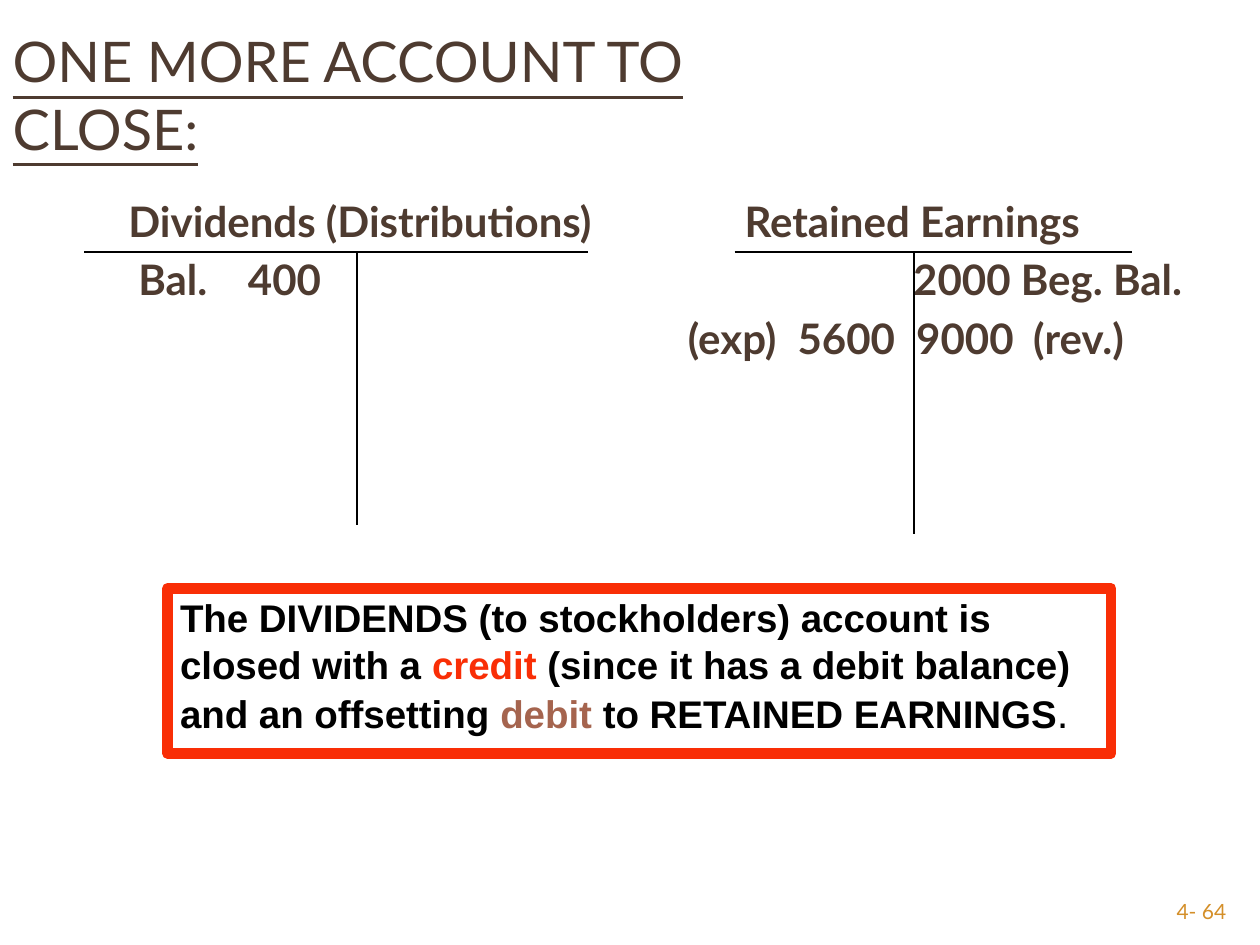
from dataclasses import dataclass

import pptx
import pptx.dml.color
import pptx.enum.shapes
import pptx.enum.text
import pptx.oxml.ns
import pptx.util
from lxml import etree

Cm = pptx.util.Cm
Pt = pptx.util.Pt
COLORS = {"brown": "4E3B30", "gold": "D48F29", "red": "F92E06",
          "rust": "A5644E", "black": "000000"}
RULE_TOP = 5.08


@dataclass
class TAccount:
    left: float
    right: float
    stem: float
    bottom: float


@dataclass
class Entry:
    text: str
    tabs: tuple[float, ...]  # distances from the text edge, in cm


ACCOUNTS = [TAccount(14.81, 22.83, 18.42, 10.77),
            TAccount(1.7, 11.86, 7.19, 10.59)]
ENTRIES = [
    Entry("Dividends (Distributions)\tRetained Earnings", (12.42,)),
    Entry("\tBal.\t400\t2000 Beg. Bal.", (0.2, 2.41, 15.82)),
    Entry("\t(exp)\t5600\t9000\t(rev.)", (11.28, 13.49, 15.88, 18.24)),
]
NOTE = [
    ("The DIVIDENDS (to stockholders) account is closed with a ", "black"),
    ("credit", "red"),
    (" (since it has a debit balance) and an offsetting ", "black"),
    ("debit", "rust"),
    (" to RETAINED EARNINGS", "black"),
]


def rgb(name: str) -> pptx.dml.color.RGBColor:
    return pptx.dml.color.RGBColor.from_string(COLORS[name])


def style(font, size: float, color: str, bold: bool = False,
          face: str = "Lato") -> None:
    font.name, font.size, font.bold = face, Pt(size), bold
    font.color.rgb = rgb(color)


def add_rule(page, x1: float, y1: float, x2: float, y2: float) -> None:
    rule = page.shapes.add_connector(
        pptx.enum.shapes.MSO_CONNECTOR.STRAIGHT, Cm(x1), Cm(y1), Cm(x2), Cm(y2))
    rule.line.color.rgb = rgb("black")
    rule.line.width = Pt(1)
    etree.SubElement(rule._element.spPr, pptx.oxml.ns.qn("a:effectLst"))


def set_tabs(para, tabs: tuple[float, ...]) -> None:
    tab_list = etree.SubElement(para._p.get_or_add_pPr(),
                                pptx.oxml.ns.qn("a:tabLst"))
    for tab in tabs:
        etree.SubElement(tab_list, pptx.oxml.ns.qn("a:tab"),
                         pos=str(int(Cm(tab))), algn="l")


def add_title(page) -> None:
    title = page.shapes.title
    title.left, title.top, title.width, title.height = (
        Cm(0), Cm(1.27), Cm(17.35), Cm(2.11))
    frame = title.text_frame
    frame.text = "ONE MORE ACCOUNT TO CLOSE:"
    frame.auto_size = pptx.enum.text.MSO_AUTO_SIZE.NONE
    frame.vertical_anchor = pptx.enum.text.MSO_ANCHOR.BOTTOM
    para = frame.paragraphs[0]
    para.alignment = pptx.enum.text.PP_ALIGN.LEFT
    style(para.font, 32, "brown")
    para.font.underline = True


def add_entries(page) -> None:
    box = page.shapes.add_textbox(Cm(2.34), Cm(3.81), Cm(23.06), Cm(12.7))
    frame = box.text_frame
    frame.word_wrap = True
    for index, entry in enumerate(ENTRIES):
        para = frame.add_paragraph() if index else frame.paragraphs[0]
        para.text = entry.text
        if index:
            para.space_before = Pt(4.8)
        set_tabs(para, entry.tabs)
        style(para.font, 24, "brown", bold=True)


def add_note(page) -> None:
    box = page.shapes.add_shape(pptx.enum.shapes.MSO_SHAPE.RECTANGLE,
                                Cm(3.38), Cm(11.86), Cm(19.02), Cm(3.33))
    box.shadow.inherit = False
    box.fill.background()
    box.line.color.rgb = rgb("red")
    box.line.width = Pt(6)
    frame = box.text_frame
    frame.word_wrap = True
    frame.vertical_anchor = pptx.enum.text.MSO_ANCHOR.TOP
    para = frame.paragraphs[0]
    para.alignment = pptx.enum.text.PP_ALIGN.LEFT
    for text, color in NOTE:
        span = para.add_run()
        span.text = text
        style(span.font, 22, color, bold=True, face="Arial")
    stop = para.add_run()
    stop.text = "."
    style(stop.font, 24, "black", face="Arial")


def add_page_number(page) -> None:
    box = page.shapes.add_textbox(Cm(22.86), Cm(17.98), Cm(2.11), Cm(0.69))
    box.text_frame.word_wrap = True
    para = box.text_frame.paragraphs[0]
    para.text = "4- 64"
    para.alignment = pptx.enum.text.PP_ALIGN.RIGHT
    style(para.font, 12, "gold")


def main() -> None:
    deck = pptx.Presentation()
    deck.slide_width, deck.slide_height = Cm(25.4), Cm(19.05)
    page = deck.slides.add_slide(deck.slide_layouts[5])

    # Heading and ledger text
    add_page_number(page)
    add_title(page)
    add_entries(page)

    # T-account rules
    for account in ACCOUNTS:
        add_rule(page, account.left, RULE_TOP, account.right, RULE_TOP)
        add_rule(page, account.stem, RULE_TOP, account.stem, account.bottom)

    # Closing explanation
    add_note(page)
    deck.save("out.pptx")


if __name__ == "__main__":
    main()
